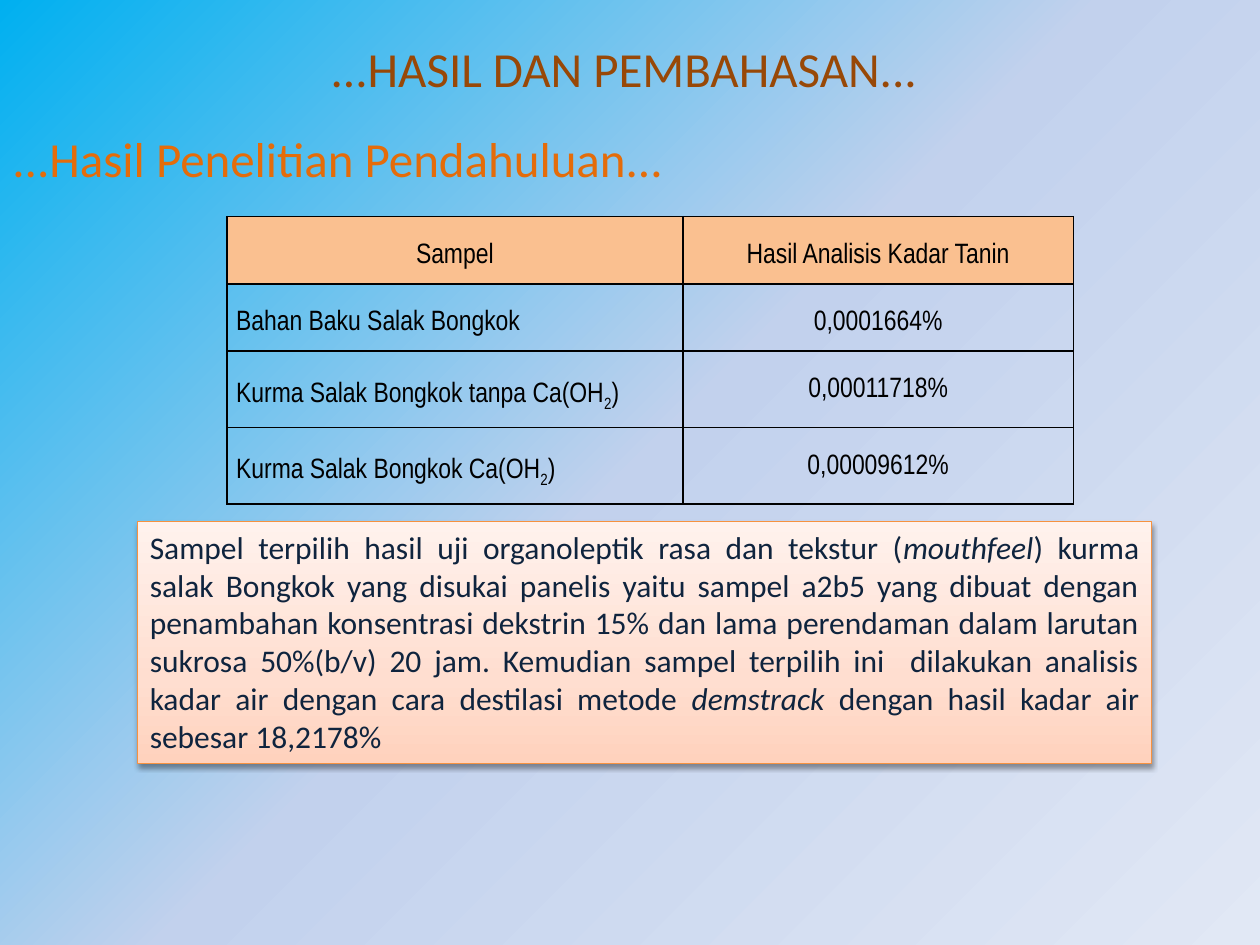
"""Build the slide on preliminary research results for Bongkok salak."""
from lxml.etree import SubElement
from pptx import Presentation
from pptx.dml.color import RGBColor
from pptx.enum.shapes import MSO_SHAPE
from pptx.enum.text import MSO_ANCHOR, PP_ALIGN
from pptx.oxml.ns import qn
from pptx.util import Pt

BLACK = RGBColor(0x00, 0x00, 0x00)
BROWN = RGBColor(0x98, 0x48, 0x07)
ORANGE = RGBColor(0xE4, 0x6C, 0x0A)
NAVY = RGBColor(0x0F, 0x24, 0x3E)
PEACH = RGBColor(0xFA, 0xC0, 0x90)
EDGE = RGBColor(0xF6, 0x92, 0x40)
SKY = [(0, RGBColor(0x00, 0xB0, 0xF0)), (50, RGBColor(0xC2, 0xD1, 0xED)),
       (100, RGBColor(0xE1, 0xE8, 0xF5))]
BLUSH = [(0, RGBColor(0xFF, 0xD2, 0xBD)), (35, RGBColor(0xFF, 0xDE, 0xD0)),
         (100, RGBColor(0xFF, 0xF2, 0xED))]

HEADINGS = [
    ("...HASIL DAN PEMBAHASAN...", (50.4, 16.5, 612, 44.64), BROWN, PP_ALIGN.CENTER),
    ("...Hasil Penelitian Pendahuluan...", (0, 67.7, 612, 44.64), ORANGE, PP_ALIGN.LEFT),
]
TANNIN_ROWS = [
    (["Sampel"], ["Hasil Analisis Kadar Tanin"]),
    (["Bahan Baku Salak Bongkok"], ["0,0001664%"]),
    (["Kurma Salak Bongkok tanpa Ca(OH", ("2", "sub"), ")"], ["0,00011718%"]),
    (["Kurma Salak Bongkok Ca(OH", ("2", "sub"), ")"], ["0,00009612%"]),
]
COLUMN_WIDTHS = (260.64, 223.2)
ROW_HEIGHT = 36.6
SUMMARY = [
    "Sampel terpilih hasil uji organoleptik rasa dan tekstur (",
    ("mouthfeel", "italic"),
    ") kurma salak Bongkok yang disukai panelis yaitu sampel a2b5 yang dibuat dengan "
    "penambahan konsentrasi dekstrin 15% dan lama perendaman dalam larutan sukrosa "
    "50%(b/v) 20 jam. Kemudian sampel terpilih ini  dilakukan analisis kadar air "
    "dengan cara destilasi metode ",
    ("demstrack ", "italic"),
    "dengan hasil kadar air sebesar 18,2178%",
]


def write(frame, parts, *, size, color, font="Calibri", align=PP_ALIGN.LEFT, spacing=None):
    para = frame.paragraphs[0]
    para.alignment = align
    para.line_spacing = spacing
    for part in parts:
        text, style = (part, None) if isinstance(part, str) else part
        span = para.add_run()
        span.text = text
        span.font.name = font
        span.font.size = Pt(size)
        span.font.color.rgb = color
        if style == "italic":
            span.font.italic = True
        elif style == "sub":
            span.font._element.set("baseline", "-25000")


def fill_gradient(fill, owner, stops, angle):
    fill.gradient()
    fill.gradient_angle = angle
    stop_list = owner.xpath(".//a:gradFill/a:gsLst")[0]
    for stop in list(stop_list):
        stop_list.remove(stop)
    for position, color in stops:
        stop = SubElement(stop_list, qn("a:gs"), pos=str(position * 1000))
        SubElement(stop, qn("a:srgbClr"), val=str(color))


def add_shadow(shape):
    shape.shadow.inherit = False
    effects = shape.element.spPr.find(qn("a:effectLst"))
    shadow = SubElement(effects, qn("a:outerShdw"), blurRad=str(Pt(3.1)),
                        dist=str(Pt(1.6)), dir="5400000", rotWithShape="0")
    color = SubElement(shadow, qn("a:srgbClr"), val=str(BLACK))
    SubElement(color, qn("a:alpha"), val="38000")


def add_borders(cell):
    properties = cell._tc.get_or_add_tcPr()
    for index, side in enumerate(("lnL", "lnR", "lnT", "lnB")):
        line = properties.makeelement(qn(f"a:{side}"), {"w": str(Pt(1))})
        paint = SubElement(line, qn("a:solidFill"))
        SubElement(paint, qn("a:srgbClr"), val=str(BLACK))
        properties.insert(index, line)


def add_heading(page, text, place, color, align):
    box = page.shapes.add_textbox(*map(Pt, place))
    box.text_frame.word_wrap = True
    box.text_frame.vertical_anchor = MSO_ANCHOR.MIDDLE
    write(box.text_frame, [text], size=28, color=color, align=align)


def add_summary(page):
    box = page.shapes.add_shape(MSO_SHAPE.RECTANGLE, Pt(78.5), Pt(298), Pt(579.6), Pt(138.2))
    fill_gradient(box.fill, box.element, BLUSH, 90)
    box.line.color.rgb = EDGE
    box.line.width = Pt(0.75)
    add_shadow(box)
    box.text_frame.word_wrap = True
    box.text_frame.vertical_anchor = MSO_ANCHOR.TOP
    write(box.text_frame, SUMMARY, size=18, color=NAVY, align=PP_ALIGN.JUSTIFY)


def add_tannin_table(page):
    table = page.shapes.add_table(
        len(TANNIN_ROWS), len(COLUMN_WIDTHS), Pt(129.6), Pt(123.8),
        Pt(sum(COLUMN_WIDTHS)), Pt(ROW_HEIGHT * len(TANNIN_ROWS))).table
    table.first_row = table.horz_banding = False
    for column, width in zip(table.columns, COLUMN_WIDTHS):
        column.width = Pt(width)
    for row_index, row in enumerate(TANNIN_ROWS):
        table.rows[row_index].height = Pt(ROW_HEIGHT)
        for column_index, parts in enumerate(row):
            cell = table.cell(row_index, column_index)
            cell.margin_left = cell.margin_right = Pt(5.4)
            cell.margin_top = cell.margin_bottom = Pt(0)
            if row_index == 0:
                cell.fill.solid()
                cell.fill.fore_color.rgb = PEACH
            else:
                cell.fill.background()
            add_borders(cell)
            is_label = row_index > 0 and column_index == 0
            write(cell.text_frame, parts, size=16, color=BLACK, font="Arial Narrow",
                  align=PP_ALIGN.LEFT if is_label else PP_ALIGN.CENTER, spacing=2.0)


def main():
    deck = Presentation()
    deck.slide_width, deck.slide_height = Pt(720), Pt(540)
    page = deck.slides.add_slide(deck.slide_layouts[6])
    fill_gradient(page.background.fill, page.element, SKY, 315)
    for heading in HEADINGS:
        add_heading(page, *heading)
    add_summary(page)
    add_tannin_table(page)
    deck.save("out.pptx")


if __name__ == "__main__":
    main()
